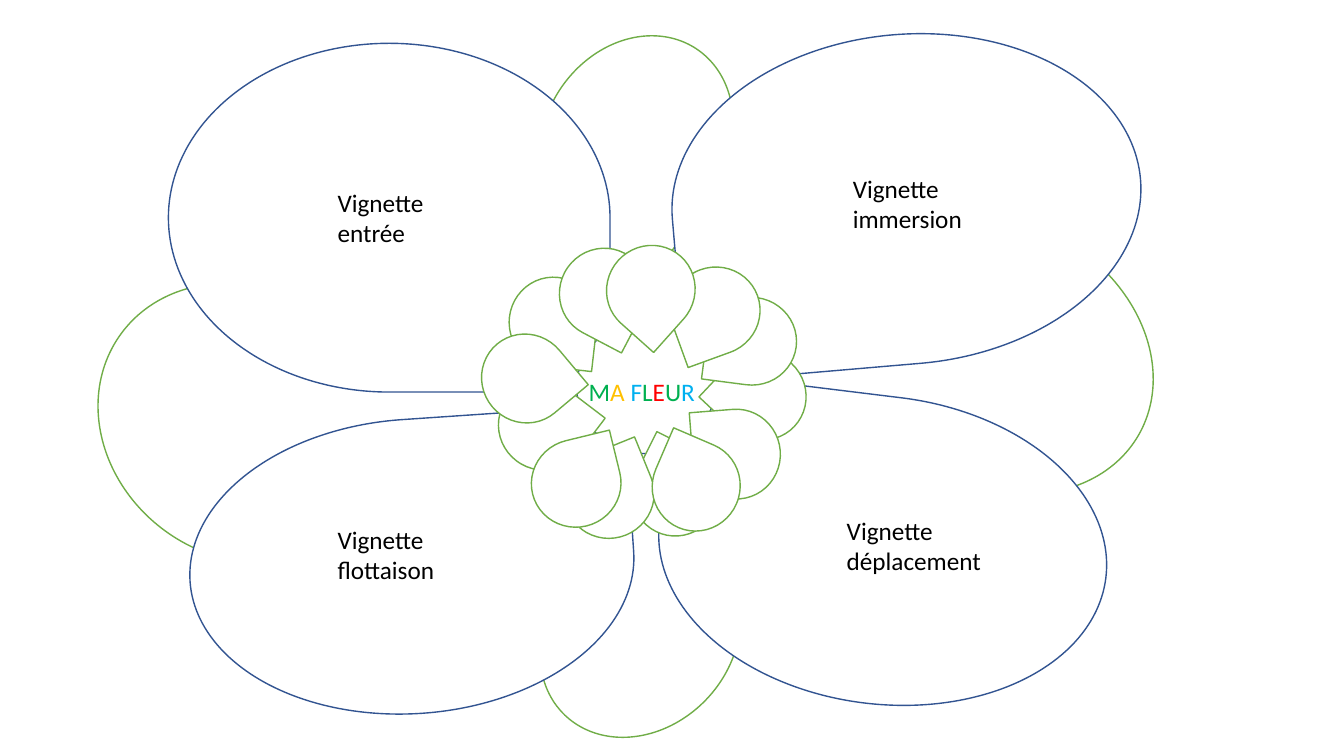
import pptx
import pptx.util
import pptx.dml.color
import pptx.enum.shapes
import pptx.enum.text

COLUMNS, ROWS = 1333, 750
GREEN, BLUE = "70AD47", "325491"
TEARDROP = pptx.enum.shapes.MSO_SHAPE.TEAR
ELLIPSE = pptx.enum.shapes.MSO_SHAPE.OVAL

OUTER_PETALS = [
    (91, 288, 301, 264, 36.2, GREEN),
    (826, 219, 325, 263, 210, GREEN),
    (527, 541, 216, 181, 313.9, GREEN),
    (523, 48, 216, 181, 123.5, GREEN),
    (723, 323, 305, 446, 277, BLUE),
    (666, 34, 466, 327, 175.1, BLUE),
    (213, -3, 346, 438, 90, BLUE),
    (188, 416, 441, 292, 356.1, BLUE),
]
FLORETS = [
    (27, 32, 96.5), (234, 105, 223.2), (209, 163, 265.5), (17, 135, 37.3),
    (149, 200, 296.6), (83, 203, 337.9), (0, 88, 50), (224, 51, 187.4),
    (169, 195, 293.3), (50, 192, 346.3), (77, 3, 117.7), (188, 21, 160),
    (124, 0, 131.8),
]
FLORET_SIZE = (89, 87)
TITLE = [
    ("M", "00B050"), ("A ", "FFC000"), ("F", "00B0F0"), ("L", "00B050"),
    ("E", "FF0000"), ("U", "00B050"), ("R", "00B0F0"),
]
LABELS = [
    (325, 181, 150, ["Vignette entrée"]),
    (836, 167, 150, ["Vignette immersion"]),
    (325, 515, 150, ["Vignette flottaison"]),
    (830, 506, 156, ["Vignette ", "déplacement"]),
]


def color(value):
    return pptx.dml.color.RGBColor.from_string(value)


def place(deck, box, left, top, width, height):
    column = deck.slide_width / COLUMNS
    row = deck.slide_height / ROWS
    return (
        round((box[0] + left) * column),
        round((box[1] + top) * row),
        round(width * column),
        round(height * row),
    )


def add_outline(page, kind, area, outline, rotation=0):
    shape = page.shapes.add_shape(kind, *area)
    shape.rotation = rotation
    shape.shadow.inherit = False
    shape.fill.solid()
    shape.fill.fore_color.rgb = color("FFFFFF")
    shape.line.color.rgb = color(outline)
    shape.line.width = pptx.util.Pt(1)
    return shape


def add_text(page, area):
    frame = page.shapes.add_textbox(*area).text_frame
    frame.word_wrap = True
    frame.auto_size = pptx.enum.text.MSO_AUTO_SIZE.SHAPE_TO_FIT_TEXT
    return frame.paragraphs[0]


def add_span(para, text, value):
    span = para.add_run()
    span.text = text
    span.font.name = "Calibri"
    span.font.size = pptx.util.Pt(18)
    span.font.color.rgb = color(value)


def draw_outer_petals(deck, page, box):
    petals = []
    for left, top, width, height, rotation, outline in OUTER_PETALS:
        area = place(deck, box, left, top, width, height)
        petals.append(add_outline(page, TEARDROP, area, outline, rotation))
    petals[0].adjustments[0] = 1.6


def draw_heart(deck, page, box):
    add_outline(page, ELLIPSE, place(deck, box, 95, 74, 137, 132), BLUE)
    para = add_text(page, place(deck, box, 97, 124, 165, 40))
    for letter, value in TITLE:
        add_span(para, letter, value)
    for left, top, rotation in FLORETS:
        area = place(deck, box, left, top, *FLORET_SIZE)
        add_outline(page, TEARDROP, area, GREEN, rotation)


def draw_labels(deck, page, box):
    for left, top, width, lines in LABELS:
        para = add_text(page, place(deck, box, left, top, width, 71))
        for number, line in enumerate(lines):
            if number:
                para.add_line_break()
            add_span(para, line, "000000")


def main():
    deck = pptx.Presentation()
    deck.slide_width = pptx.util.Inches(13.33)
    deck.slide_height = pptx.util.Inches(7.5)
    page = deck.slides.add_slide(deck.slide_layouts[6])
    draw_outer_petals(deck, page, (0, 0))
    draw_heart(deck, page, (477, 244))
    draw_labels(deck, page, (0, 0))
    deck.save("out.pptx")


if __name__ == "__main__":
    main()
